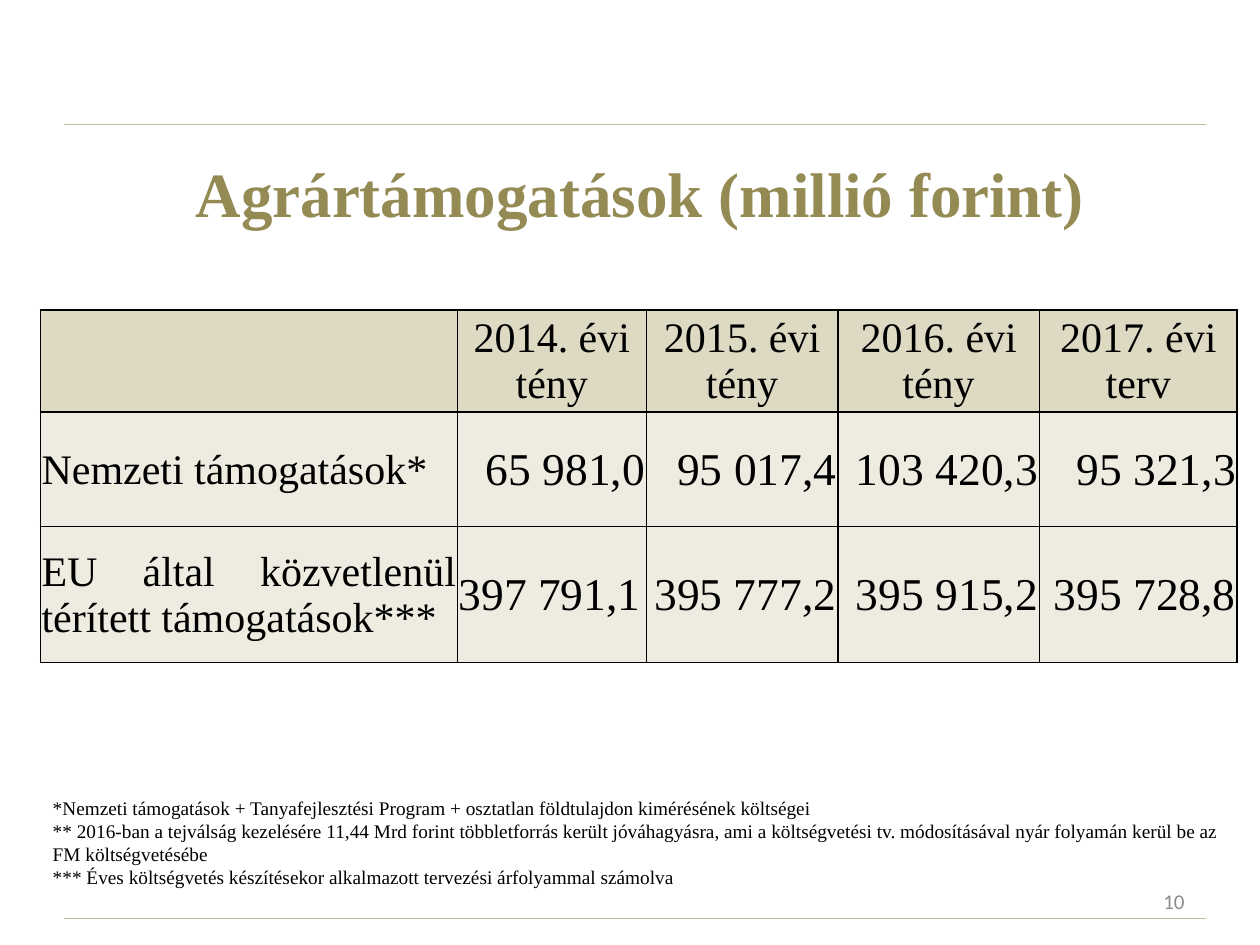
"""Build a slide with a table of agricultural subsidies and its footnotes."""
from lxml.etree import SubElement
from pptx import Presentation
from pptx.dml.color import RGBColor
from pptx.enum.shapes import MSO_CONNECTOR
from pptx.enum.text import MSO_ANCHOR, MSO_AUTO_SIZE, PP_ALIGN
from pptx.oxml.ns import qn
from pptx.util import Inches, Pt


def color(value):
    """Turn a hex string into a colour."""
    return RGBColor.from_string(value)


def write(frame, text, alignment, size, hex_color="000000", name="Times New Roman", bold=False):
    """Fill a text frame with one formatted paragraph for each line."""
    frame.text = text
    frame.word_wrap = True
    font_format = {"size": Pt(size), "name": name, "bold": bold}
    for paragraph in frame.paragraphs:
        paragraph.alignment = alignment
        for run in paragraph.runs:
            for attribute, value in font_format.items():
                setattr(run.font, attribute, value)
            run.font.color.rgb = color(hex_color)


presentation = Presentation()
presentation.slide_width = Inches(10)
presentation.slide_height = Inches(7.5)
slide = presentation.slides.add_slide(presentation.slide_layouts[5])

for rule_top in (0.99, 7.29):
    rule = slide.shapes.add_connector(
        MSO_CONNECTOR.STRAIGHT, Inches(0.51), Inches(rule_top), Inches(9.57), Inches(rule_top))
    rule.line.color.rgb = color("C4BD97")
    rule.line.width = Pt(0.75)
    SubElement(rule._element.spPr, qn("a:effectLst"))

title = slide.shapes.title
title_place = {"left": 0.59, "top": 1.15, "width": 8.98, "height": 1.31}
for attribute, value in title_place.items():
    setattr(title, attribute, Inches(value))
title_frame = title.text_frame
write(title_frame, "Agrártámogatások (millió forint)", PP_ALIGN.CENTER, 36, "948A54", bold=True)
title_format = {"auto_size": MSO_AUTO_SIZE.NONE, "vertical_anchor": MSO_ANCHOR.TOP,
                "margin_top": Inches(0.08)}
for attribute, value in title_format.items():
    setattr(title_frame, attribute, value)

table_rows = [
    ["", "2014. évi\ntény", "2015. évi\ntény", "2016. évi\ntény", "2017. évi terv"],
    ["Nemzeti támogatások*", "65 981,0", "95 017,4", "103 420,3", "95 321,3"],
    ["EU által közvetlenül térített támogatások***",
     "397 791,1", "395 777,2", "395 915,2", "395 728,8"],
]
column_widths = [3.31, 1.5, 1.52, 1.6, 1.57]
row_heights = [0.81, 0.91, 1.08]
cell_format = {"vertical_anchor": MSO_ANCHOR.MIDDLE, "margin_left": Inches(0.01),
               "margin_right": Inches(0.01), "margin_top": Inches(0.01), "margin_bottom": 0}

table = slide.shapes.add_table(
    len(row_heights), len(column_widths), Inches(0.32), Inches(2.46),
    Inches(sum(column_widths)), Inches(sum(row_heights))).table
for column, width in zip(table.columns, column_widths):
    column.width = Inches(width)
for row, height in zip(table.rows, row_heights):
    row.height = Inches(height)

for row_index, texts in enumerate(table_rows):
    for column_index, text in enumerate(texts):
        cell = table.cell(row_index, column_index)
        if row_index == 0:
            alignment, size = PP_ALIGN.CENTER, 24
        elif column_index == 0:
            alignment, size = PP_ALIGN.JUSTIFY, 24
        else:
            alignment, size = PP_ALIGN.RIGHT, 26
        write(cell.text_frame, text, alignment, size)
        for attribute, value in cell_format.items():
            setattr(cell, attribute, value)
        properties = cell._tc.get_or_add_tcPr()
        for side in ("lnL", "lnR", "lnT", "lnB"):
            border = SubElement(properties, qn(f"a:{side}"), w=str(Pt(1)))
            SubElement(SubElement(border, qn("a:solidFill")), qn("a:srgbClr"), val="000000")
        cell.fill.solid()
        cell.fill.fore_color.rgb = color("DDD9C3" if row_index == 0 else "EEECE1")
table.cell(2, 1).text_frame.paragraphs[0].alignment = PP_ALIGN.LEFT

footnotes = [
    "*Nemzeti támogatások + Tanyafejlesztési Program + osztatlan földtulajdon kimérésének költségei",
    "** 2016-ban a tejválság kezelésére 11,44 Mrd forint többletforrás került jóváhagyásra, "
    "ami a költségvetési tv. módosításával nyár folyamán kerül be az FM költségvetésébe",
    "*** Éves költségvetés készítésekor alkalmazott tervezési árfolyammal számolva",
]
footnote_box = slide.shapes.add_textbox(Inches(0.32), Inches(6.27), Inches(9.68), Inches(0.84))
write(footnote_box.text_frame, "\n".join(footnotes), PP_ALIGN.LEFT, 11)

number_box = slide.shapes.add_textbox(Inches(7.17), Inches(6.95), Inches(2.33), Inches(0.4))
write(number_box.text_frame, "10", PP_ALIGN.RIGHT, 12, "8C8C8C", "Calibri")
number_box.text_frame.vertical_anchor = MSO_ANCHOR.MIDDLE

presentation.save("out.pptx")
